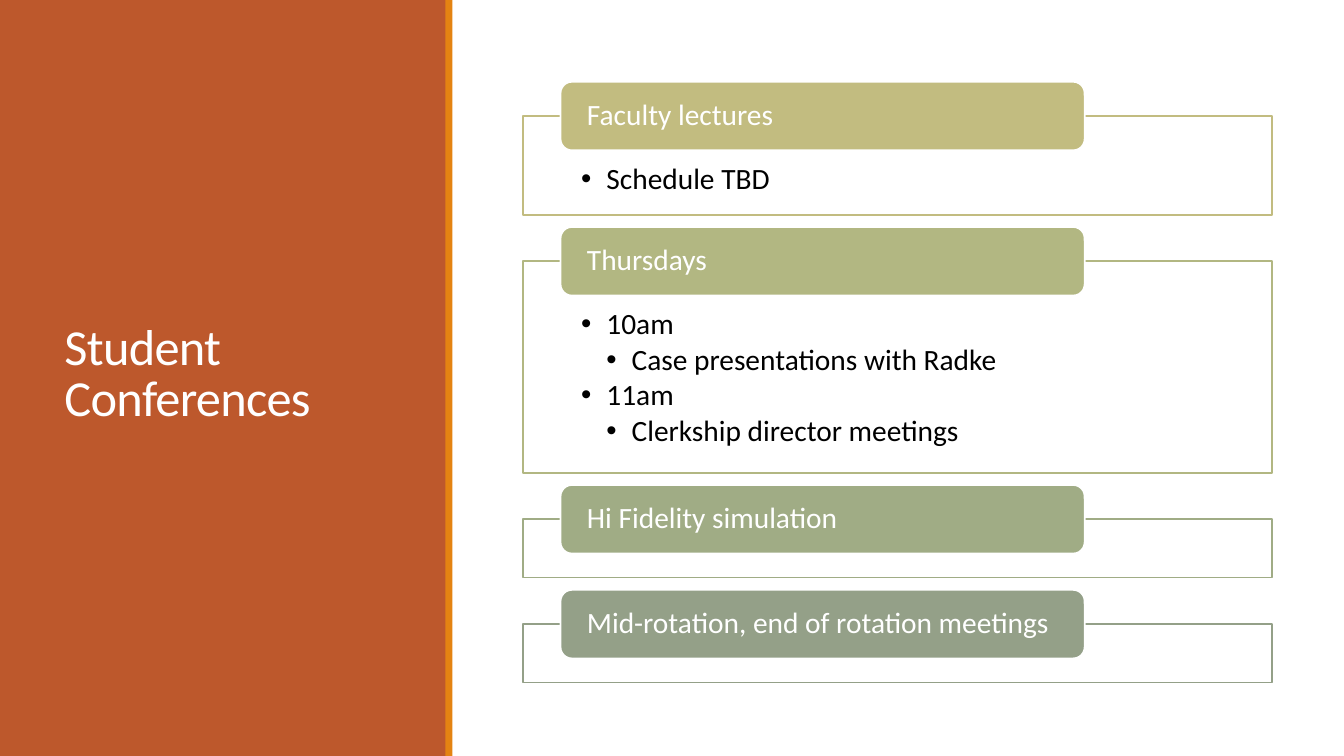
from lxml import etree
from pptx import Presentation
from pptx.dml.color import RGBColor
from pptx.enum.shapes import MSO_SHAPE as Shape
from pptx.enum.text import MSO_ANCHOR as Anchor, PP_ALIGN as Align
from pptx.oxml.ns import qn
from pptx.util import Pt

COLORS = {
    "white": "FFFFFF", "black": "000000", "rust": "BD582C", "orange": "E48312",
    "khaki": "C2BC80", "olive": "B2B782", "sage": "A0AC85", "moss": "94A088",
}

# Heading, colour, box height, bullets as (level, text)
SECTIONS = [
    ("Faculty lectures", "khaki", 70.6, [(0, "Schedule TBD")]),
    ("Thursdays", "olive", 151.2, [
        (0, "10am"), (1, "Case presentations with Radke"),
        (0, "11am"), (1, "Clerkship director meetings")]),
    ("Hi Fidelity simulation", "sage", 41.8, []),
    ("Mid-rotation, end of rotation meetings", "moss", 41.8, []),
]
FIRST_TAB_TOP = 58.4
TAB_RISE = 24.4
TAB_HEIGHT = 49
SECTION_GAP = 8.7
BULLET_INDENT = 18

TITLE_FRAME = {"word_wrap": True, "vertical_anchor": Anchor.MIDDLE}
TAB_FRAME = {
    "word_wrap": True, "vertical_anchor": Anchor.MIDDLE,
    "margin_left": Pt(16.5), "margin_right": Pt(16.5),
    "margin_top": 0, "margin_bottom": 0,
}
BOX_FRAME = {
    "word_wrap": True, "vertical_anchor": Anchor.TOP,
    "margin_left": Pt(41.5), "margin_right": Pt(41.5),
    "margin_top": Pt(34.5), "margin_bottom": Pt(11.5),
}


def color(name):
    return RGBColor.from_string(COLORS[name])


def apply_format(target, values):
    for name, value in values.items():
        setattr(target, name, value)


def add_block(slide, kind, bounds, fill, line=None):
    shape = slide.shapes.add_shape(kind, *map(Pt, bounds))
    shape.shadow.inherit = False
    shape.fill.solid()
    shape.fill.fore_color.rgb = color(fill)
    if line:
        shape.line.color.rgb = color(line)
        shape.line.width = Pt(1.25)
    else:
        shape.line.fill.background()
    return shape


def write_paragraph(paragraph, text, size, font_color, spacing, after=0):
    apply_format(paragraph, {
        "alignment": Align.LEFT, "line_spacing": spacing, "space_after": Pt(after)})
    run = paragraph.add_run()
    run.text = text
    apply_format(run.font, {"name": "Calibri", "size": Pt(size)})
    run.font.color.rgb = color(font_color)
    return run


def add_bullet(paragraph, level):
    paragraph.level = level
    properties = paragraph._p.get_or_add_pPr()
    properties.set("marL", str(Pt(BULLET_INDENT * (level + 1))))
    properties.set("indent", str(Pt(-BULLET_INDENT)))
    etree.SubElement(properties, qn("a:buFont"), typeface="Arial")
    etree.SubElement(properties, qn("a:buChar"), char="•")


def add_title(slide, text):
    title = slide.shapes.add_textbox(*map(Pt, (39, 41, 242.6, 454.3)))
    frame = title.text_frame
    apply_format(frame, TITLE_FRAME)
    run = write_paragraph(frame.paragraphs[0], text, 36, "white", 0.85)
    run.font._element.set("spc", "-50")


def add_section(slide, tab_top, heading, accent, height, bullets):
    # Outlined box with its bullets
    box = add_block(slide, Shape.RECTANGLE,
                    (373.7, tab_top + TAB_RISE, 535, height), "white", accent)
    fill_color = box.fill._xPr.find(qn("a:solidFill"))[0]
    etree.SubElement(fill_color, qn("a:alpha"), val="90000")
    frame = box.text_frame
    apply_format(frame, BOX_FRAME)
    for index, (level, text) in enumerate(bullets):
        paragraph = frame.add_paragraph() if index else frame.paragraphs[0]
        write_paragraph(paragraph, text, 21, "black", 0.9, after=2.7)
        add_bullet(paragraph, level)

    # Heading tab across the top edge
    tab = add_block(slide, Shape.ROUNDED_RECTANGLE,
                    (400.4, tab_top, 374.4, TAB_HEIGHT), accent, "white")
    apply_format(tab.text_frame, TAB_FRAME)
    write_paragraph(tab.text_frame.paragraphs[0], heading, 21, "white", 0.9)


def main():
    presentation = Presentation()
    apply_format(presentation, {"slide_width": Pt(960), "slide_height": Pt(540)})
    slide = presentation.slides.add_slide(presentation.slide_layouts[6])

    # Title panel
    add_block(slide, Shape.RECTANGLE, (0, 0, 319, 540), "rust")
    add_title(slide, "Student Conferences")
    add_block(slide, Shape.RECTANGLE, (318.2, 0, 5, 540), "orange")

    # Stacked sections
    tab_top = FIRST_TAB_TOP
    for heading, accent, height, bullets in SECTIONS:
        add_section(slide, tab_top, heading, accent, height, bullets)
        tab_top += TAB_RISE + height + SECTION_GAP

    presentation.save("out.pptx")


if __name__ == "__main__":
    main()
